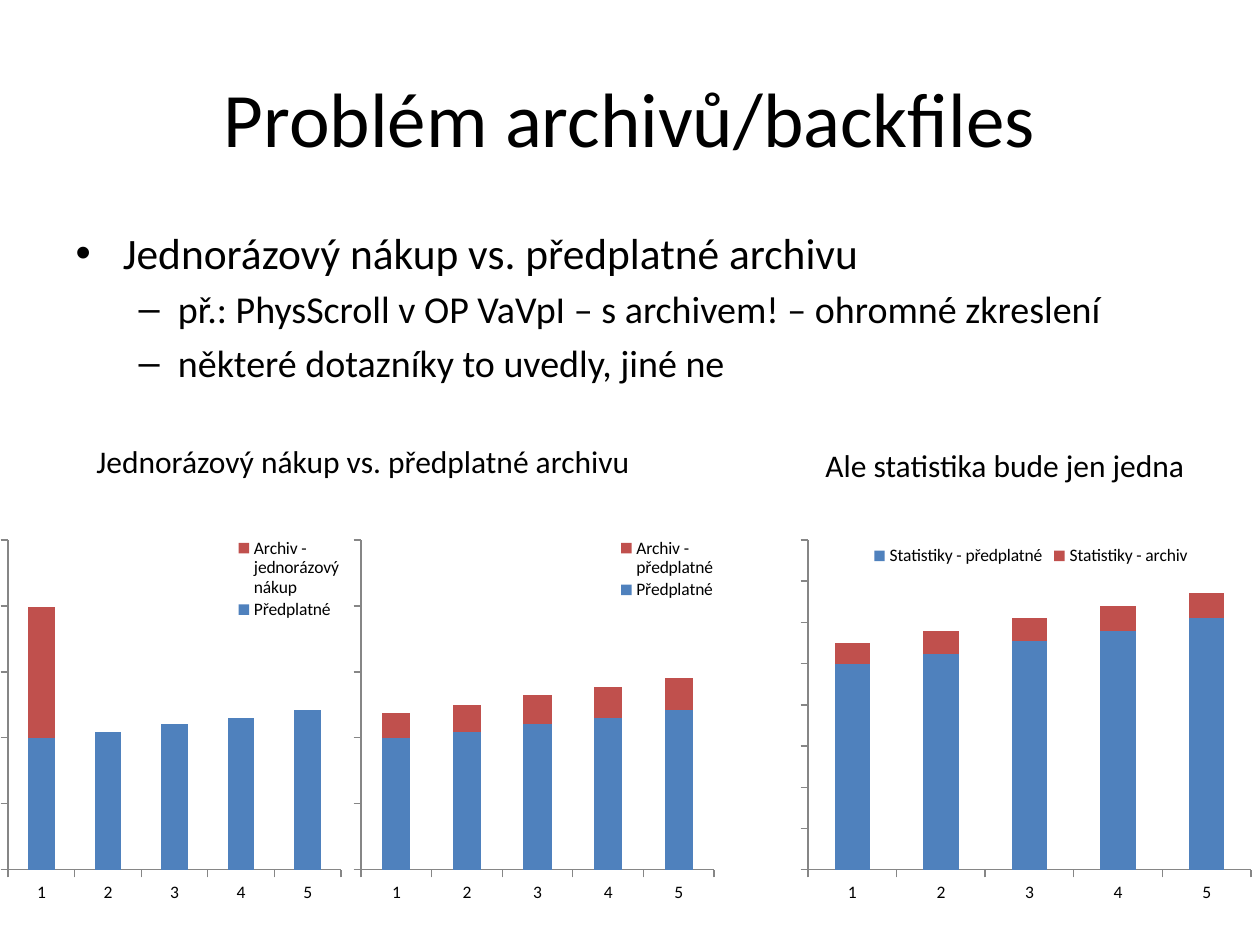
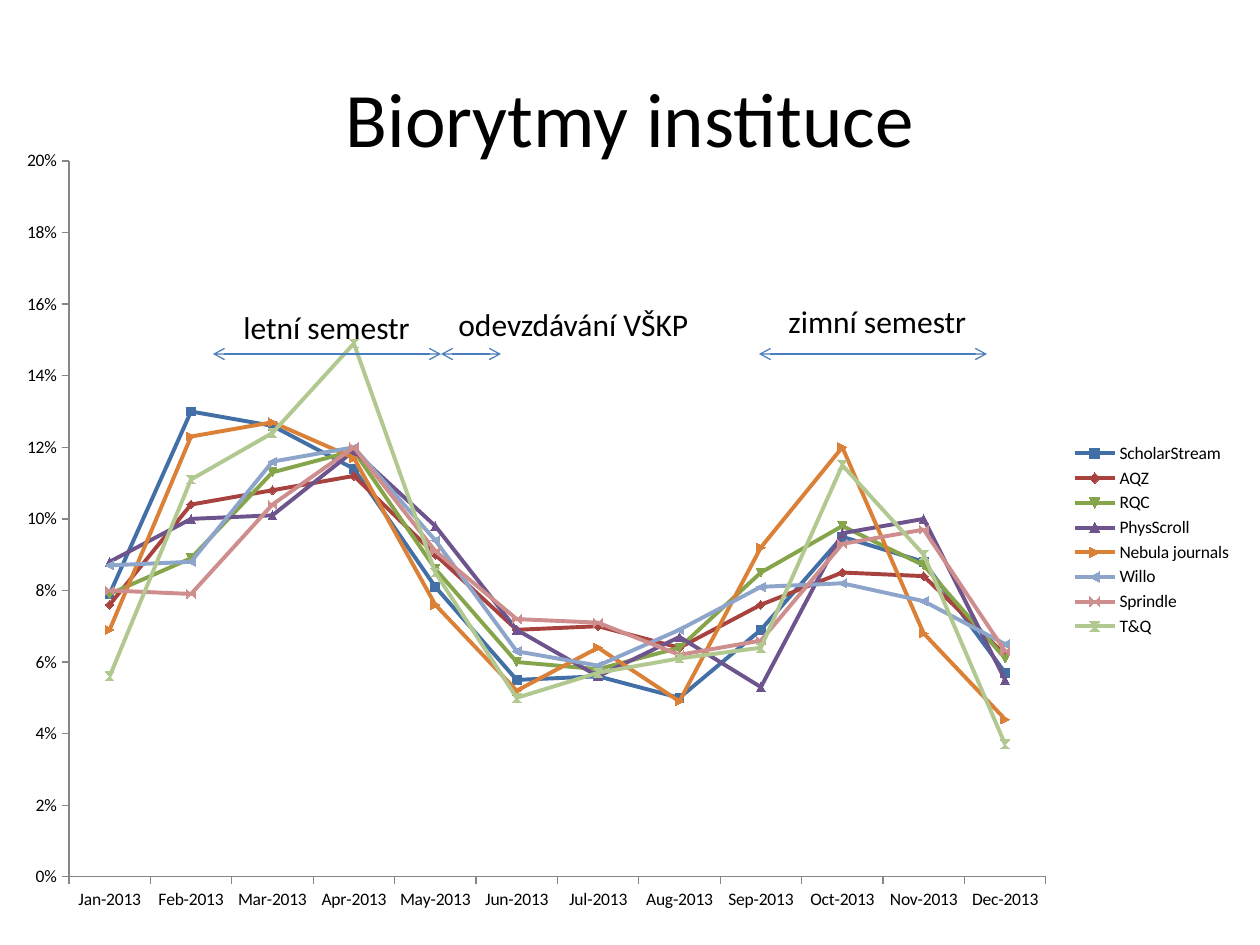
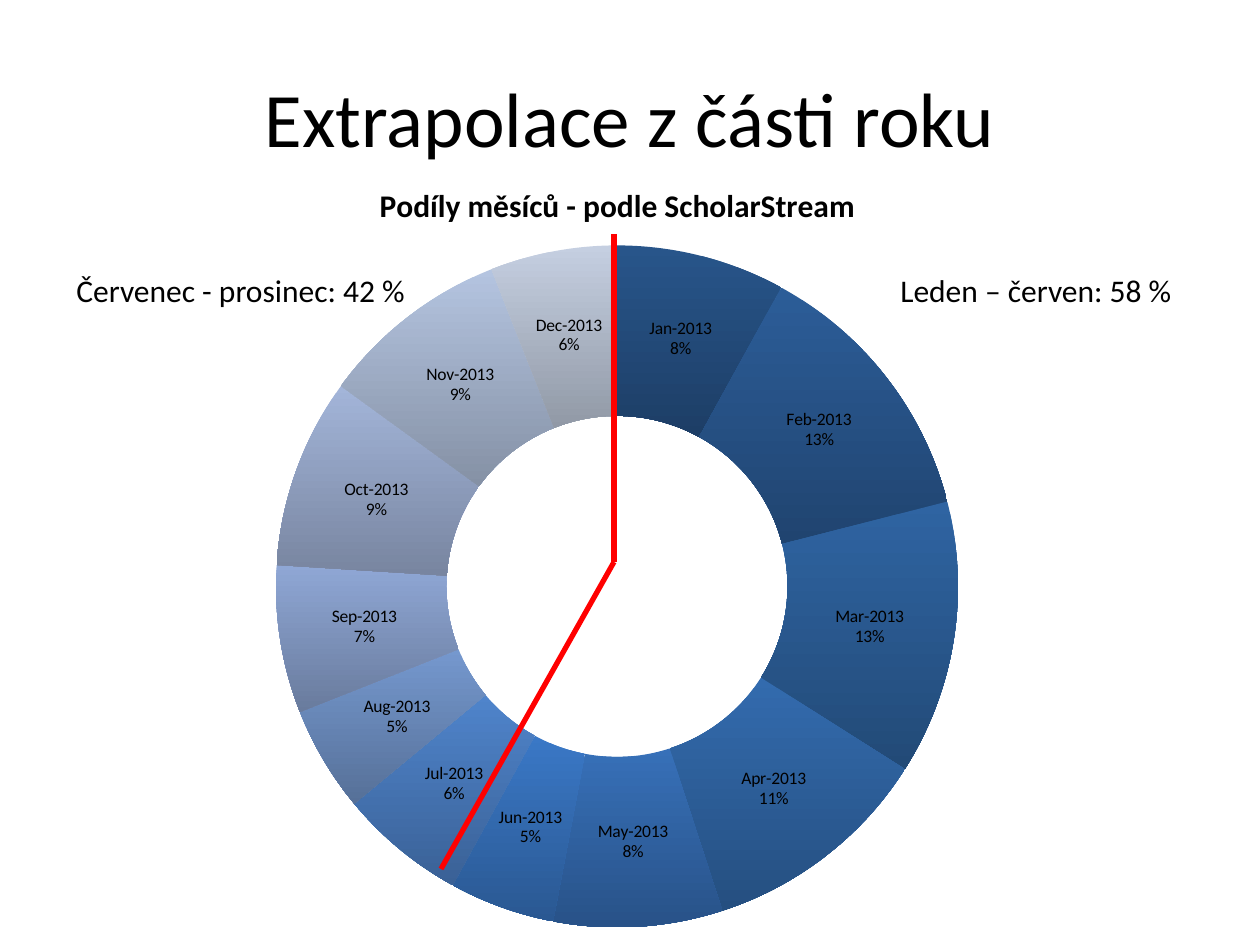
from lxml import etree
from pptx import Presentation
from pptx.chart.data import CategoryChartData
from pptx.dml.color import RGBColor
from pptx.enum.chart import (XL_CHART_TYPE, XL_LEGEND_POSITION, XL_TICK_LABEL_POSITION,
                             XL_TICK_MARK)
from pptx.enum.shapes import MSO_CONNECTOR
from pptx.enum.text import MSO_AUTO_SIZE
from pptx.oxml.ns import qn
from pptx.util import Emu, Pt

STACKED = XL_CHART_TYPE.COLUMN_STACKED
LINES = XL_CHART_TYPE.LINE_MARKERS
DOUGHNUT = XL_CHART_TYPE.DOUGHNUT
CORNER, TOP, RIGHT = XL_LEGEND_POSITION.CORNER, XL_LEGEND_POSITION.TOP, XL_LEGEND_POSITION.RIGHT
NO_LABELS = XL_TICK_LABEL_POSITION.NONE
OUT, NO_TICK = XL_TICK_MARK.OUTSIDE, XL_TICK_MARK.NONE
STRAIGHT = MSO_CONNECTOR.STRAIGHT

FONT = "Calibri"
COLORS = {"text": "000000", "axis": "868686", "arrow": "4B7EBC", "divider": "FF0000",
          "subscription": "4F81BD", "archive": "C0504D"}

# Content: archives (boxes are left, top, width, height in px)
BULLETS = [
    (0, "Jednorázový nákup vs. předplatné archivu"),
    (1, "př.: PhysScroll v OP VaVpI – s archivem! – ohromné zkreslení"),
    (1, "některé dotazníky to uvedly, jiné ne"),
]
BULLET_SIZES = [24.8, 21.7]
CHART_CAPTIONS = [
    ("Jednorázový nákup vs. předplatné archivu", (84, 436, 586, 89)),
    ("Ale statistika bude jen jedna", (813, 440, 422, 89)),
]
YEARS = ["1", "2", "3", "4", "5"]
SUBSCRIPTION = [82, 86, 91, 95, 100]
ARCHIVE_CHARTS = [
    {"names": ("Předplatné", "Archiv - předplatné"), "archive": [16, 17, 18, 19, 20],
     "box": (353, 532, 369, 378), "plot": (360, 540, 354, 330),
     "legend": (620, 536, 100, 66), "pos": CORNER, "unit": 41.2, "steps": 5},
    {"names": ("Předplatné", "Archiv - jednorázový nákup"), "archive": [82, 0, 0, 0, 0],
     "box": (0, 532, 348, 378), "plot": (8, 540, 333, 330),
     "legend": (238, 536, 108, 86), "pos": CORNER, "unit": 41.2, "steps": 5},
    {"names": ("Statistiky - předplatné", "Statistiky - archiv"), "archive": [8, 9, 9, 10, 10],
     "box": (799, 532, 461, 378), "plot": (808, 540, 443, 330),
     "legend": (868, 544, 326, 24), "pos": TOP, "unit": 16.4, "steps": 8},
]

# Content: monthly rhythm
MONTHS = [f"{m}-2013" for m in
          "Jan Feb Mar Apr May Jun Jul Aug Sep Oct Nov Dec".split()]
USAGE = [
    ("ScholarStream", "416FA6",
     [.079, .13, .126, .114, .081, .055, .056, .05, .069, .095, .088, .057]),
    ("AQZ", "A8423F",
     [.076, .104, .108, .112, .09, .069, .07, .064, .076, .085, .084, .062]),
    ("RQC", "86A44A",
     [.079, .089, .113, .119, .086, .06, .058, .064, .085, .098, .087, .061]),
    ("PhysScroll", "6E548D",
     [.088, .1, .101, .119, .098, .069, .056, .067, .053, .096, .1, .055]),
    ("Nebula journals", "DA8137",
     [.069, .123, .127, .117, .076, .052, .064, .049, .092, .12, .068, .044]),
    ("Willo", "8EA5CB",
     [.087, .088, .116, .12, .094, .063, .059, .069, .081, .082, .077, .065]),
    ("Sprindle", "CE8E8D",
     [.08, .079, .104, .12, .091, .072, .071, .062, .066, .093, .097, .063]),
    ("T&Q", "B1C990",
     [.056, .111, .124, .149, .085, .05, .057, .061, .064, .115, .09, .037]),
]
ARROW_Y = 354
PERIODS = [  # label, label box, arrow start, arrow end
    ("letní semestr", (231, 302, 194, 50), 213, 441),
    ("zimní semestr", (776, 296, 205, 50), 759, 987),
    ("odevzdávání VŠKP", (446, 299, 258, 50), 441, 501),
]

# Content: shares of months
SHARES = [8, 13, 13, 11, 8, 5, 6, 5, 7, 9, 9, 6]
SLICE_COLORS = ["28558A", "2C5D98", "2F64A2", "336BAE", "3770B8", "3A78C6",
                "4F84CB", "7598CE", "8FA7D5", "A3B5D9", "B4C4E0", "C5CFE1"]
HALF_YEARS = [
    ("Leden – červen: 58 %", (888, 265, 300, 50)),
    ("Červenec - prosinec: 42 %", (64, 265, 358, 50)),
]
DIVIDER = [(614, 234), (614, 562), (441, 869)]


def px(n):
    return Emu(round(n * 914400 / 126))


def rgb(color):
    return RGBColor.from_string(color)


def style_font(font, size, color=COLORS["text"], bold=None):
    font.name, font.size, font.bold = FONT, Pt(size), bold
    font.color.rgb = rgb(color)


def write(p, text, **fmt):
    r = p.add_run()
    r.text = text
    style_font(r.font, **fmt)


def add_text(s, text, box, wrap=False, **fmt):
    tf = s.shapes.add_textbox(*map(px, box)).text_frame
    tf.word_wrap = wrap
    write(tf.paragraphs[0], text, **fmt)


def add_line(s, start, end, color, width, arrows=False):
    line = s.shapes.add_connector(STRAIGHT, *map(px, start + end))
    line.line.color.rgb = rgb(color)
    line.line.width = Pt(width)
    if arrows:
        ln = line.line._get_or_add_ln()
        for tag in ("a:headEnd", "a:tailEnd"):
            etree.SubElement(ln, qn(tag), type="arrow")
    etree.SubElement(line._element.spPr, qn("a:effectLst"))


def new_slide(layout, title):
    s = prs.slides.add_slide(prs.slide_layouts[layout])
    write(s.shapes.title.text_frame.paragraphs[0], title, size=44)
    return s


def layout_xml(box, area, inner=False):
    """Manual layout of a chart part, as fractions of the chart area."""
    layout = etree.Element(qn("c:layout"))
    manual = etree.SubElement(layout, qn("c:manualLayout"))
    x, y, w, h = area
    values = [("xMode", "edge"), ("yMode", "edge"),
              ("x", (x - box[0]) / box[2]), ("y", (y - box[1]) / box[3]),
              ("w", w / box[2]), ("h", h / box[3])]
    if inner:
        values.insert(0, ("layoutTarget", "inner"))
    for tag, value in values:
        etree.SubElement(manual, qn(f"c:{tag}"), val=str(value))
    return layout


def add_chart(s, kind, cats, series, box, plot):
    data = CategoryChartData()
    data.categories = cats
    for name, values in series:
        data.add_series(name, values)
    chart = s.shapes.add_chart(kind, *map(px, box), data).chart
    style_font(chart.font, 10)
    chart.has_title = False
    chart.plots[0].vary_by_categories = kind == DOUGHNUT
    area = chart._chartSpace.chart.plotArea
    for old in area.findall(qn("c:layout")):
        area.remove(old)
    area.insert(0, layout_xml(box, plot, inner=True))
    return chart


def style_axes(chart, unit, steps):
    for axis in (chart.category_axis, chart.value_axis):
        axis.has_major_gridlines = False
        axis.major_tick_mark, axis.minor_tick_mark = OUT, NO_TICK
        axis.format.line.color.rgb = rgb(COLORS["axis"])
    axis.minimum_scale, axis.maximum_scale = 0, round(unit * steps, 2)
    axis.major_unit = unit


def add_legend(chart, pos, overlay):
    chart.has_legend = True
    chart.legend.position = pos
    chart.legend.include_in_layout = overlay
    style_font(chart.legend.font, 10)
    return chart.legend


def archive_slide():
    s = new_slide(1, "Problém archivů/backfiles")
    body = s.placeholders[1]
    body.left, body.top, body.width, body.height = map(px, (63, 220, 1134, 193))
    tf = body.text_frame
    tf.auto_size = MSO_AUTO_SIZE.NONE
    for i, (level, text) in enumerate(BULLETS):
        p = tf.add_paragraph() if i else tf.paragraphs[0]
        p.level = level
        write(p, text, size=BULLET_SIZES[level])
    for c in ARCHIVE_CHARTS:
        series = zip(c["names"], (SUBSCRIPTION, c["archive"]))
        chart = add_chart(s, STACKED, YEARS, series, c["box"], c["plot"])
        style_axes(chart, c["unit"], c["steps"])
        chart.value_axis.tick_label_position = NO_LABELS
        chart.plots[0].gap_width, chart.plots[0].overlap = 150, 100
        for ser, key in zip(chart.plots[0].series, ("subscription", "archive")):
            ser.format.fill.solid()
            ser.format.fill.fore_color.rgb = rgb(COLORS[key])
        legend = add_legend(chart, c["pos"], True)
        legend._element.find(qn("c:legendPos")).addnext(layout_xml(c["box"], c["legend"]))
    for text, box in CHART_CAPTIONS:
        add_text(s, text, box, wrap=True, size=18)


def rhythm_slide():
    s = new_slide(5, "Biorytmy instituce")
    chart = add_chart(s, LINES, MONTHS, [(name, values) for name, _, values in USAGE],
                      (3, 135, 1242, 810), (69, 161, 977, 716))
    style_axes(chart, 0.02, 10)
    labels = chart.value_axis.tick_labels
    labels.number_format, labels.number_format_is_linked = "0%", False
    add_legend(chart, RIGHT, False)
    for ser, (_, color, _) in zip(chart.plots[0].series, USAGE):
        ser.smooth = False
        ser.format.line.color.rgb = rgb(color)
        ser.format.line.width = Pt(2.25)
        ser.marker.format.fill.solid()
        ser.marker.format.fill.fore_color.rgb = rgb(color)
    for text, box, left, right in PERIODS:
        add_line(s, (left, ARROW_Y), (right, ARROW_Y), COLORS["arrow"], 0.75, arrows=True)
        add_text(s, text, box, size=18)


def share_slide():
    s = new_slide(5, "Extrapolace z části roku")
    chart = add_chart(s, DOUGHNUT, MONTHS, [("Podíl", SHARES)],
                      (0, 155, 1235, 790), (276, 245, 682, 683))
    chart.has_legend = False
    chart.has_title = True
    write(chart.chart_title.text_frame.paragraphs[0], "Podíly měsíců - podle ScholarStream",
          size=18, bold=True)
    plot = chart.plots[0]
    for i, color in enumerate(SLICE_COLORS):
        fmt = plot.series[0].points[i].format
        fmt.fill.gradient()
        fmt.fill.gradient_angle = 270
        light = rgb(color)
        dark = RGBColor(*(int(part * 0.74) for part in light))
        for stop, shade in zip(fmt.fill.gradient_stops, (light, dark)):
            stop.color.rgb = shade
        fmt.line.fill.background()
    # Month and percentage on two lines
    plot.has_data_labels = True
    labels = plot.data_labels
    labels.show_value, labels.show_category_name, labels.show_percentage = False, True, True
    labels.number_format, labels.number_format_is_linked = "0%", False
    style_font(labels.font, 10)
    separator = etree.Element(qn("c:separator"))
    separator.text = "\n"
    labels._element.find(qn("c:showBubbleSize")).addnext(separator)
    for start, end in zip(DIVIDER, DIVIDER[1:]):
        add_line(s, start, end, COLORS["divider"], 3)
    for text, box in HALF_YEARS:
        add_text(s, text, box, size=18)


prs = Presentation()
prs.slide_width, prs.slide_height = px(1260), px(945)
archive_slide()
rhythm_slide()
share_slide()
prs.save("out.pptx")
